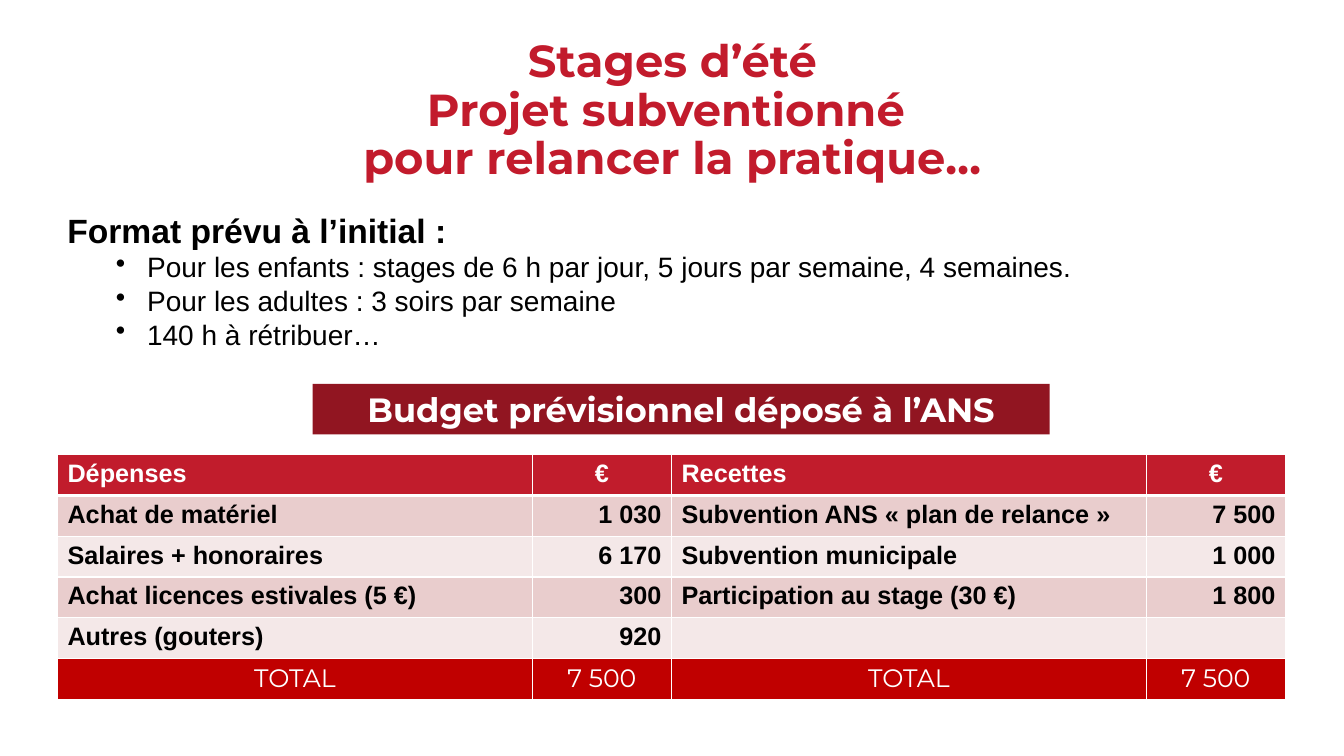
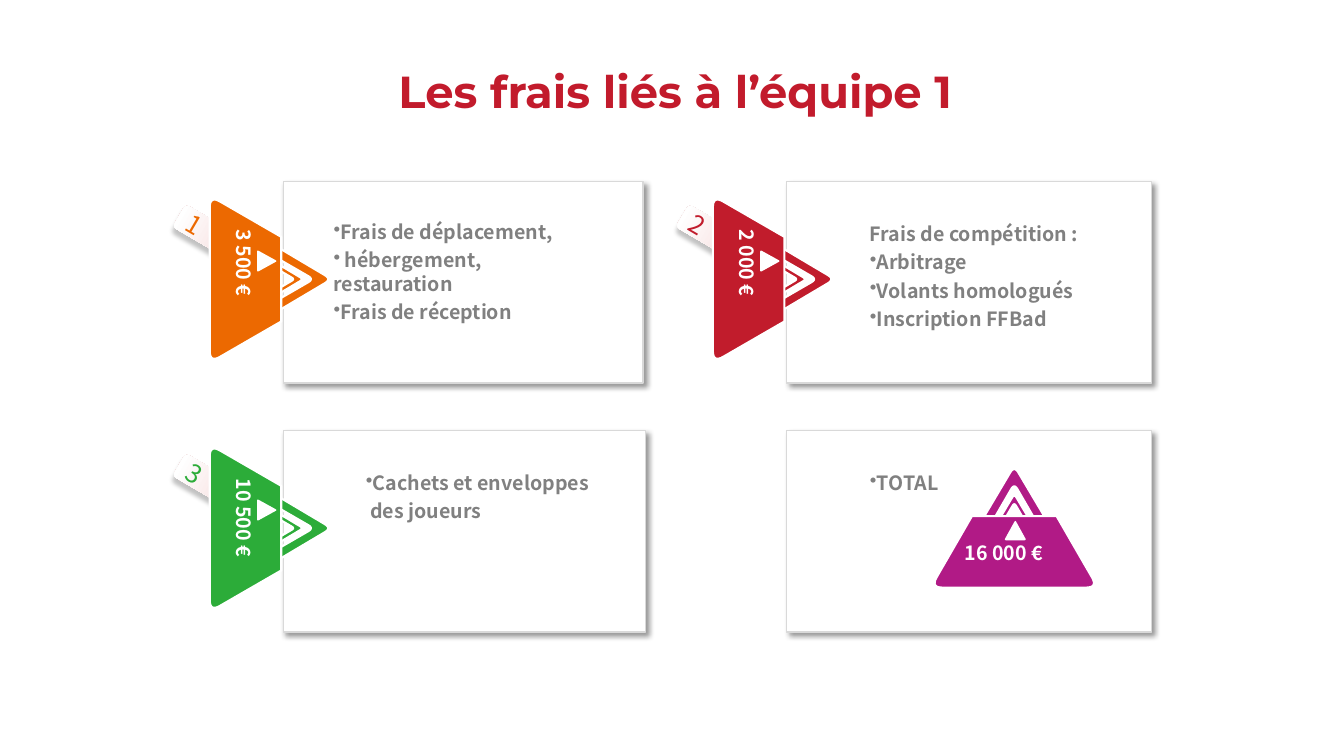
import pptx
import pptx.dml.color
import pptx.enum.shapes
import pptx.enum.text
import pptx.oxml
import pptx.oxml.ns
import pptx.util
from pptx.util import Inches

qn = pptx.oxml.ns.qn
NS = 'xmlns:a="http://schemas.openxmlformats.org/drawingml/2006/main"'
SHAPE = pptx.enum.shapes.MSO_SHAPE
ALIGN = {"l": pptx.enum.text.PP_ALIGN.LEFT,
         "c": pptx.enum.text.PP_ALIGN.CENTER,
         "r": pptx.enum.text.PP_ALIGN.RIGHT}
ANCHOR = pptx.enum.text.MSO_ANCHOR

WHITE, BLACK, GREY = "FFFFFF", "000000", "808080"
TITLE_RED, RED, DARK_RED, TOTAL_RED = "C21B2C", "C11C2C", "911521", "C00000"
ORANGE, GREEN, PURPLE = "EC6901", "2CAC39", "B11A86"
BANDS = ["E9CDCD", "F4E8E8"]
HEAD, BODY, LABEL = "Montserrat", "Arial", "Noto Sans CJK SC"


def rgb(value):
    return pptx.dml.color.RGBColor.from_string(value)


def xml(text):
    """Parse one element whose tag is in the drawing namespace."""
    return pptx.oxml.parse_xml(text.replace(" ", f" {NS} ", 1))


def write(tf, text, size=18, font=BODY, color=BLACK, bold=False, align="l",
          bullet=False, left=0, hang=0, before=0, spacing=None):
    """Add one formatted paragraph to a text frame."""
    first = not tf.text
    p = tf.paragraphs[0] if first else tf.add_paragraph()
    p.text = text
    p.alignment = ALIGN[align]
    p.line_spacing = spacing
    p.space_before = pptx.util.Pt(0 if first else before)
    if bullet:
        pPr = p._p.get_or_add_pPr()
        pPr.set("marL", str(Inches(left)))
        pPr.set("indent", str(Inches(-hang)))
        pPr.append(xml('<a:buChar char="•"/>'))
    for r in p.runs:
        r.font.size, r.font.name, r.font.bold = pptx.util.Pt(size), font, bold
        r.font.color.rgb = rgb(color)


def rounded(points, cut, corners):
    """Outline of a polygon whose listed corners are curved over a length."""
    outline = []
    for i, (x, y) in enumerate(points):
        if i not in corners:
            outline.append((x, y))
            continue
        ends = []
        for nx, ny in (points[i - 1], points[(i + 1) % len(points)]):
            k = cut / ((nx - x) ** 2 + (ny - y) ** 2) ** 0.5
            ends.append((x + k * (nx - x), y + k * (ny - y)))
        (ax, ay), (bx, by) = ends
        for t in (n / 8 for n in range(9)):
            a, m, b = (1 - t) ** 2, 2 * t * (1 - t), t * t
            outline.append((a * ax + m * x + b * bx, a * ay + m * y + b * by))
    return outline


def triangle(apex, base, half, cut, shift=0):
    points = [(shift, apex), (shift + half, base), (shift - half, base)]
    return rounded(points, cut, (0, 1, 2))


class Deck:
    def __init__(self):
        self.prs = pptx.Presentation()
        self.prs.slide_width, self.prs.slide_height = Inches(13.33), Inches(7.5)
        self.s = None

    def new_slide(self):
        self.s = self.prs.slides.add_slide(self.prs.slide_layouts[6])

    def text(self, x, y, w, h, wrap=True, rotation=0, anchor=ANCHOR.TOP):
        sp = self.s.shapes.add_textbox(*map(Inches, (x, y, w, h)))
        sp.rotation = rotation
        tf = sp.text_frame
        tf.word_wrap, tf.vertical_anchor = wrap, anchor
        return tf

    def title(self, text, x, y, h):
        tf = self.text(x, y, 11.5, h, anchor=ANCHOR.MIDDLE)
        write(tf, text, 32, HEAD, TITLE_RED, True, "c", spacing=0.9)

    def paint(self, sp, fill, line=None, width=1.0):
        sp.shadow.inherit = False
        sp.fill.solid()
        sp.fill.fore_color.rgb = rgb(fill)
        if line:
            sp.line.color.rgb = rgb(line)
            sp.line.width = pptx.util.Pt(width)
        else:
            sp.line.fill.background()

    def box(self, x, y, w, h, fill, line=None, kind=SHAPE.RECTANGLE):
        sp = self.s.shapes.add_shape(kind, *map(Inches, (x, y, w, h)))
        self.paint(sp, fill, line)
        return sp

    def cast_shadow(self, sp, alpha, blur, dist, angle):
        shadow = xml(f'<a:outerShdw blurRad="{blur * 12700}" dist="{dist * 12700}" '
                     f'dir="{angle * 60000}" algn="tl" rotWithShape="0">'
                     f'<a:srgbClr val="{BLACK}"><a:alpha val="{alpha * 1000}"/>'
                     '</a:srgbClr></a:outerShdw>')
        sp._element.spPr.find(qn("a:effectLst")).append(shadow)

    def banner(self, text, x, y, w, h):
        tf = self.box(x, y, w, h, DARK_RED).text_frame
        write(tf, text, 24, HEAD, WHITE, True, "c")

    def cell(self, cell, text, fill, rule_below=1, **fmt):
        tcPr = cell._tc.get_or_add_tcPr()
        for side, width in (("L", 1), ("R", 1), ("T", 1), ("B", rule_below)):
            tcPr.append(xml(f'<a:ln{side} w="{width * 12700}"><a:solidFill>'
                            f'<a:srgbClr val="{WHITE}"/></a:solidFill></a:ln{side}>'))
        cell.fill.solid()
        cell.fill.fore_color.rgb = rgb(fill)
        if text:
            write(cell.text_frame, text, **fmt)

    def budget(self, rows, x, y, widths, row_height):
        frame = self.s.shapes.add_table(
            len(rows), len(widths), *map(Inches, (
                x, y, sum(widths), row_height * len(rows))))
        table = frame.table
        for column, width in zip(table.columns, widths):
            column.width = Inches(width)
        for i, row in enumerate(rows):
            table.rows[i].height = Inches(row_height)
            for j, text in enumerate(row):
                amount, cell = j % 2, table.cell(i, j)
                if i == 0:
                    self.cell(cell, text, RED, 3, color=WHITE, bold=True,
                              align="c" if amount else "l")
                elif i == len(rows) - 1:
                    self.cell(cell, text, TOTAL_RED, font=HEAD, color=WHITE, align="c")
                else:
                    self.cell(cell, text, BANDS[(i - 1) % 2], bold=True,
                              align="r" if amount else "l")

    def card(self, x, y, w, text_x, text_y, lines):
        """White panel; lines pair a text with whether it has a bullet."""
        self.cast_shadow(self.box(x, y, w, 2, WHITE, "D9D9D9"), 40, 4, 3, 45)
        tf = self.text(text_x, text_y, 2.7, 1.35, wrap=False)
        for text, bullet in lines:
            write(tf, text, 14, LABEL, GREY, True, bullet=bullet, before=3.5)

    def tag(self, number, x, y, color):
        sp = self.box(x, y, 0.52, 0.26, WHITE, kind=SHAPE.ROUNDED_RECTANGLE)
        sp.rotation = 30.4
        sp.fill.gradient()
        sp.fill.gradient_angle = 0
        stops = sp._element.spPr.find(".//" + qn("a:gsLst"))
        for stop in list(stops):
            stops.remove(stop)
        for pos, shade in ((0, "F0BCBD"), (3, "F7DFDF"), (16, WHITE), (100, "F7DFDF")):
            stops.append(xml(f'<a:gs pos="{pos * 1000}"><a:srgbClr val="{shade}"/></a:gs>'))
        self.cast_shadow(sp, 24, 3, 4, 99)
        tf = self.text(x + 0.02, y - 0.11, 0.35, 0.4, wrap=False, rotation=30.4)
        write(tf, number, 18, LABEL, color)

    def outline(self, contours, place, fill, line=None):
        """Draw closed contours, each point put on the slide by place."""
        builder = None
        for contour in contours:
            points = [tuple(map(Inches, place(*point))) for point in contour]
            if builder is None:
                builder = self.s.shapes.build_freeform(*points[0])
            else:
                builder.move_to(*points[0])
            builder.add_line_segments(points[1:], close=True)
        self.paint(builder.convert_to_shape(), fill, line, 1.5)

    def emblem(self, amount, x, y, color, sideways=True):
        """Layered arrow with its tip at x, y, pointing right or up."""
        def place(across, along):
            return (x - along, y + across) if sideways else (x + across, y + along)

        body = rounded([(-0.42, 0.46), (0.42, 0.46), (0.83, 1.17), (-0.83, 1.17)],
                       0.12, (2, 3))
        for contours in (
                [triangle(-0.04, 0.87, 0.54, 0.08), triangle(0.14, 0.78, 0.37, 0.06)],
                [triangle(0.24, 0.71, 0.28, 0.04), triangle(0.33, 0.67, 0.2, 0.03)],
                [body]):
            self.outline(contours, place, color, WHITE)
        marker = triangle(0.5, 0.7, 0.11, 0.02, shift=-0.18 if sideways else 0.01)
        self.outline([marker], place, WHITE)
        if sideways:
            tf = self.text(x - 1.1, y - 0.59, 0.44, 1.17)
            tf._txBody.bodyPr.set("vert", "vert")
        else:
            tf = self.text(x - 0.59, y + 0.66, 1.17, 0.44)
        write(tf, amount, 14, LABEL, WHITE, True)


def summer_camps(deck):
    deck.new_slide()
    deck.title("Stages d’été\vProjet subventionné \vpour relancer la pratique…",
               0.92, 0.38, 1.46)
    deck.budget([
        ["Dépenses", "€", "Recettes", "€"],
        ["Achat de matériel", "1 030", "Subvention ANS « plan de relance »", "7 500"],
        ["Salaires + honoraires", "6 170", "Subvention municipale", "1 000"],
        ["Achat licences estivales (5 €)", "300", "Participation au stage (30 €)", "1 800"],
        ["Autres (gouters)", "920", "", ""],
        ["TOTAL", "7 500", "TOTAL", "7 500"],
    ], 0.57, 4.51, [4.71, 1.38, 4.71, 1.38], 0.405)
    deck.banner("Budget prévisionnel déposé à l’ANS", 3.1, 3.81, 7.31, 0.5)
    tf = deck.text(0.57, 2.03, 12.29, 1.51)
    write(tf, "Format prévu à l’initial :", 24, bold=True)
    for line in ("Pour les enfants : stages de 6 h par jour, 5 jours par semaine, 4 semaines.",
                 "Pour les adultes : 3 soirs par semaine",
                 "140 h à rétribuer…"):
        write(tf, line, 20, bullet=True, left=0.79, hang=0.31)


def team_costs(deck):
    deck.new_slide()
    left, right, top, bottom = 2.81, 7.8, 1.8, 4.27
    cards = [
        (left, top, 3.57, 3.21, 2.13, ORANGE, "3 500 €",
         [("Frais de déplacement,", True), (" hébergement, restauration", True),
          ("Frais de réception", True)]),
        (right, top, 3.62, 8.53, 2.15, RED, "2 000 €",
         [("Frais de compétition :", False), ("Arbitrage", True),
          ("Volants homologués", True), ("Inscription FFBad", True)]),
        (left, bottom, 3.59, 3.53, 4.62, GREEN, "10 500 €",
         [("Cachets et enveloppes", True), (" des joueurs", False)]),
    ]
    for number, (x, y, w, text_x, text_y, color, amount, lines) in enumerate(cards, 1):
        deck.card(x, y, w, text_x, text_y, lines)
        deck.tag(str(number), x - 1.07, y + 0.34, color)
        deck.emblem(amount, x + 0.44, y + 0.97, color)
    deck.card(right, bottom, 3.62, 8.53, 4.62, [("TOTAL", True)])
    deck.emblem("16 000 €", 10.06, 4.66, PURPLE, sideways=False)
    deck.title("Les frais liés à l’équipe 1", 0.95, 0.71, 0.45)


def main():
    deck = Deck()
    summer_camps(deck)
    team_costs(deck)
    deck.prs.save("out.pptx")


if __name__ == "__main__":
    main()
